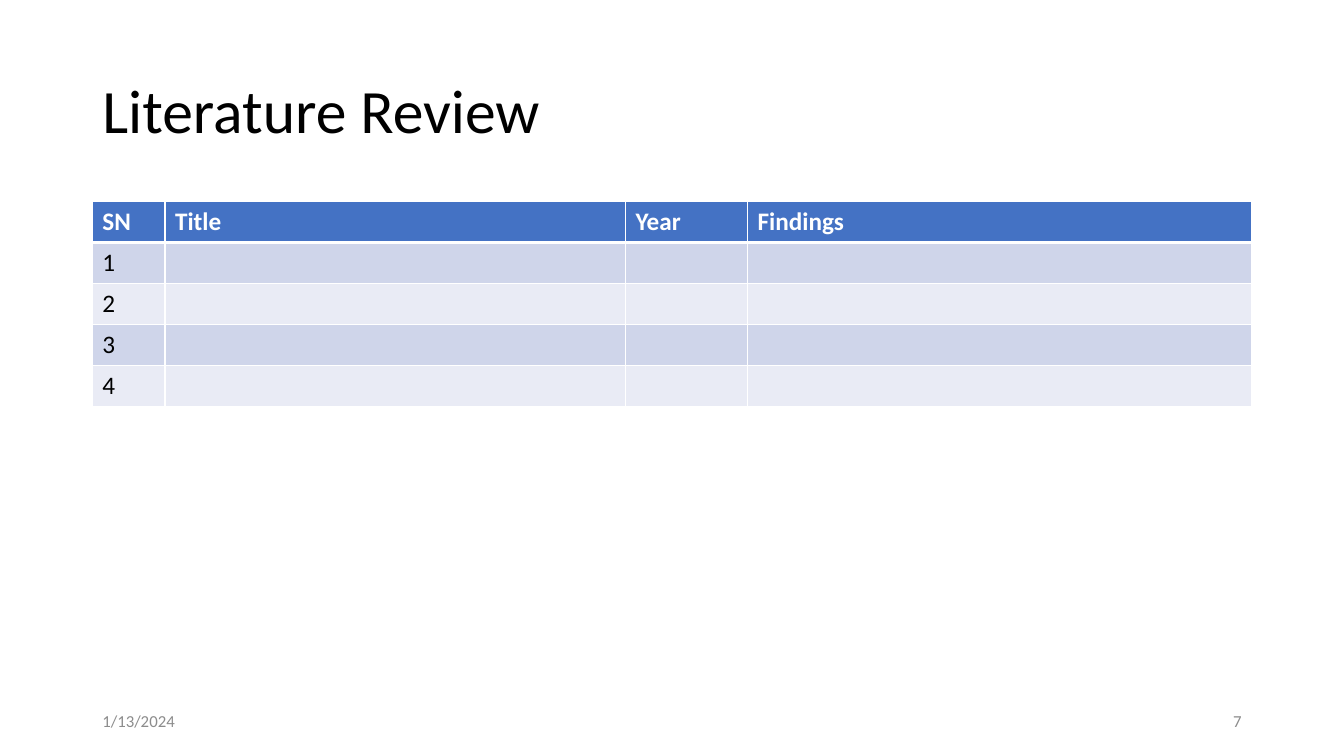
"""Build the literature review slide with its table of findings."""
from dataclasses import dataclass

from lxml import etree
from pptx import Presentation
from pptx.dml.color import RGBColor
from pptx.enum.text import MSO_ANCHOR, PP_ALIGN
from pptx.oxml.ns import qn
from pptx.slide import Slide
from pptx.table import _Cell
from pptx.text.text import _Paragraph
from pptx.util import Inches, Pt

MIDDLE = MSO_ANCHOR.MIDDLE
LEFT, RIGHT = PP_ALIGN.LEFT, PP_ALIGN.RIGHT
BLACK = RGBColor(0x00, 0x00, 0x00)
WHITE = RGBColor(0xFF, 0xFF, 0xFF)
GRAY = RGBColor(0x8C, 0x8C, 0x8C)
BLUE = RGBColor(0x44, 0x72, 0xC4)
BANDS = (RGBColor(0xCF, 0xD5, 0xEA), RGBColor(0xE9, 0xEB, 0xF5))
FONT = "Calibri"

WIDE, HIGH = Inches(13.33), Inches(7.5)
COLS, ROWS = 160, 90
EDGE, SPAN = 11, 138
TOP, DEPTH = 24, 24.36
FOOT, SLIM, SIDE = 83.4, 4.8, 36


@dataclass
class Label:
    text: str
    col: float
    row: float
    cols: float
    rows: float
    size: int
    color: RGBColor
    align: PP_ALIGN = LEFT
    line: float = 1.0


@dataclass
class Field:
    name: str
    cols: float


LABELS = (
    Label("Literature Review", EDGE, 4.8, SPAN, 17.4, 44, BLACK, line=0.9),
    Label("1/13/2024", EDGE, FOOT, SIDE, SLIM, 12, GRAY),
    Label("7", EDGE + SPAN - SIDE, FOOT, SIDE, SLIM, 12, GRAY, RIGHT),
)
FIELDS = (Field("SN", 8.64), Field("Title", 54.84), Field("Year", 14.52), Field("Findings", 60))
COUNT = 4


def across(cols: float) -> int:
    return round(WIDE * cols / COLS)


def down(rows: float) -> int:
    return round(HIGH * rows / ROWS)


def style(para: _Paragraph, size: int, color: RGBColor, bold: bool = False) -> None:
    for run in para.runs:
        run.font.name = FONT
        run.font.size = Pt(size)
        run.font.bold = bold
        run.font.color.rgb = color


def add_label(slide: Slide, label: Label) -> None:
    box = slide.shapes.add_textbox(
        across(label.col), down(label.row), across(label.cols), down(label.rows))
    frame = box.text_frame
    frame.word_wrap = True
    frame.vertical_anchor = MIDDLE
    frame.text = label.text
    para = frame.paragraphs[0]
    para.alignment = label.align
    para.line_spacing = label.line
    style(para, label.size, label.color)


def add_rules(cell: _Cell, top: int, base: int) -> None:
    props = cell._tc.get_or_add_tcPr()
    for side, width in (("L", 1), ("R", 1), ("T", top), ("B", base)):
        rule = etree.SubElement(props, qn(f"a:ln{side}"), w=str(Pt(width)))
        fill = etree.SubElement(rule, qn("a:solidFill"))
        etree.SubElement(fill, qn("a:srgbClr"), val=str(WHITE))


def fill_cell(cell: _Cell, text: str, row: int) -> None:
    head = row == 0
    add_rules(cell, 3 if row == 1 else 1, 3 if head else 1)
    cell.fill.solid()
    cell.fill.fore_color.rgb = BLUE if head else BANDS[(row - 1) % len(BANDS)]
    if text:
        cell.text_frame.text = text
        style(cell.text_frame.paragraphs[0], 18, WHITE if head else BLACK, head)


def add_review(slide: Slide) -> None:
    total = COUNT + 1
    table = slide.shapes.add_table(
        total, len(FIELDS), across(EDGE), down(TOP), across(SPAN), down(DEPTH)).table
    for col, field in enumerate(FIELDS):
        table.columns[col].width = across(field.cols)
        for row in range(total):
            entry = str(row) if col == 0 else ""
            fill_cell(table.cell(row, col), entry if row else field.name, row)


def main() -> None:
    deck = Presentation()
    deck.slide_width, deck.slide_height = WIDE, HIGH
    slide = deck.slides.add_slide(deck.slide_layouts[6])
    add_review(slide)
    for label in LABELS:
        add_label(slide, label)
    deck.save("out.pptx")


if __name__ == "__main__":
    main()
